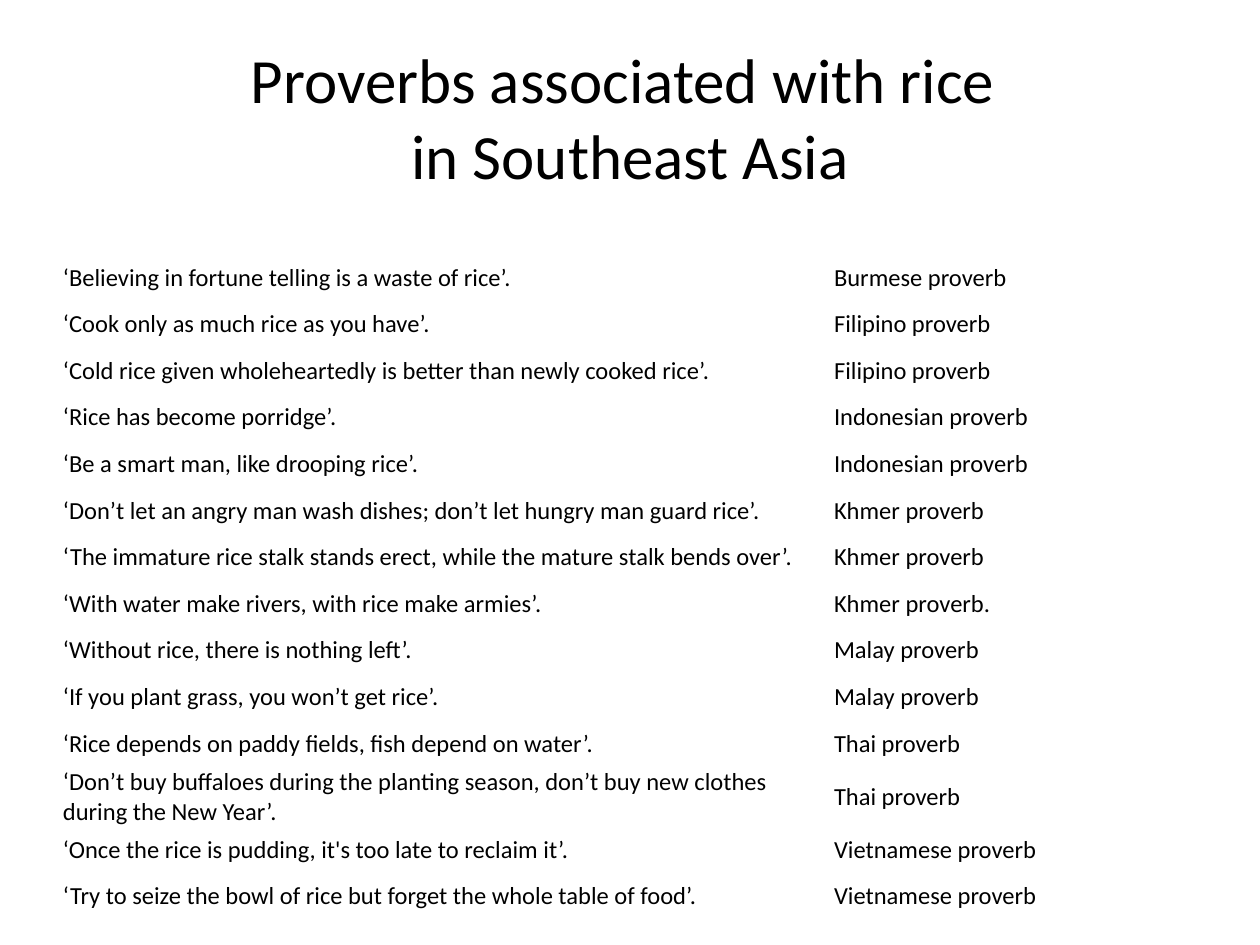
from pptx import Presentation
from pptx.dml.color import RGBColor
from pptx.enum.text import MSO_ANCHOR, PP_ALIGN
from pptx.util import Inches, Pt

BLACK = RGBColor(0x00, 0x00, 0x00)
FONT = "Calibri"
TITLE_LINES = ["Proverbs associated with rice ", "in Southeast Asia"]
COLUMN_WIDTHS = [6.12, 2.88]
ROW_HEIGHT = 0.37

PROVERBS = [
    ("‘Believing in fortune telling is a waste of rice’.", "Burmese proverb"),
    ("‘Cook only as much rice as you have’.", "Filipino proverb"),
    ("‘Cold rice given wholeheartedly is better than newly cooked rice’.", "Filipino proverb"),
    ("‘Rice has become porridge’.", "Indonesian proverb"),
    ("‘Be a smart man, like drooping rice’.", "Indonesian proverb"),
    ("‘Don’t let an angry man wash dishes; don’t let hungry man guard rice’.", "Khmer proverb"),
    ("‘The immature rice stalk stands erect, while the mature stalk bends over’.", "Khmer proverb"),
    ("‘With water make rivers, with rice make armies’.", "Khmer proverb."),
    ("‘Without rice, there is nothing left’.", "Malay proverb"),
    ("‘If you plant grass, you won’t get rice’.", "Malay proverb"),
    ("‘Rice depends on paddy fields, fish depend on water’.", "Thai proverb"),
    ("‘Don’t buy buffaloes during the planting season, don’t buy new clothes "
     "during the New Year’.", "Thai proverb"),
    ("‘Once the rice is pudding, it's too late to reclaim it’.", "Vietnamese proverb"),
    ("‘Try to seize the bowl of rice but forget the whole table of food’.", "Vietnamese proverb"),
]


def add_run(paragraph, text, size):
    run = paragraph.add_run()
    run.text = text
    run.font.name = FONT
    run.font.size = Pt(size)
    run.font.color.rgb = BLACK


def fill_title(slide):
    title = slide.shapes.title
    title.left, title.top = Inches(0.5), Inches(0.3)
    title.width, title.height = Inches(9), Inches(1.25)
    title.text_frame.vertical_anchor = MSO_ANCHOR.MIDDLE
    paragraph = title.text_frame.paragraphs[0]
    paragraph.alignment = PP_ALIGN.CENTER
    for index, line in enumerate(TITLE_LINES):
        if index:
            paragraph.add_line_break()
        add_run(paragraph, line, 36)


def fill_cell(cell, text):
    cell.fill.background()
    cell.vertical_anchor = MSO_ANCHOR.MIDDLE
    cell.margin_left = cell.margin_right = Inches(0.07)
    cell.margin_top = cell.margin_bottom = 0
    add_run(cell.text_frame.paragraphs[0], text, 14)


def add_proverb_table(slide):
    table = slide.shapes.add_table(
        len(PROVERBS), len(COLUMN_WIDTHS), Inches(0.43), Inches(2.02),
        Inches(sum(COLUMN_WIDTHS)), Inches(ROW_HEIGHT * len(PROVERBS))).table
    table.first_row = False
    table.horz_banding = False
    for column, width in zip(table.columns, COLUMN_WIDTHS):
        column.width = Inches(width)
    for row, texts in zip(table.rows, PROVERBS):
        row.height = Inches(ROW_HEIGHT)
        for cell, text in zip(row.cells, texts):
            fill_cell(cell, text)


def main():
    presentation = Presentation()
    presentation.slide_width = Inches(10)
    presentation.slide_height = Inches(7.5)
    # "Title Only" layout
    slide = presentation.slides.add_slide(presentation.slide_layouts[5])
    fill_title(slide)
    add_proverb_table(slide)
    presentation.save("out.pptx")


if __name__ == "__main__":
    main()
